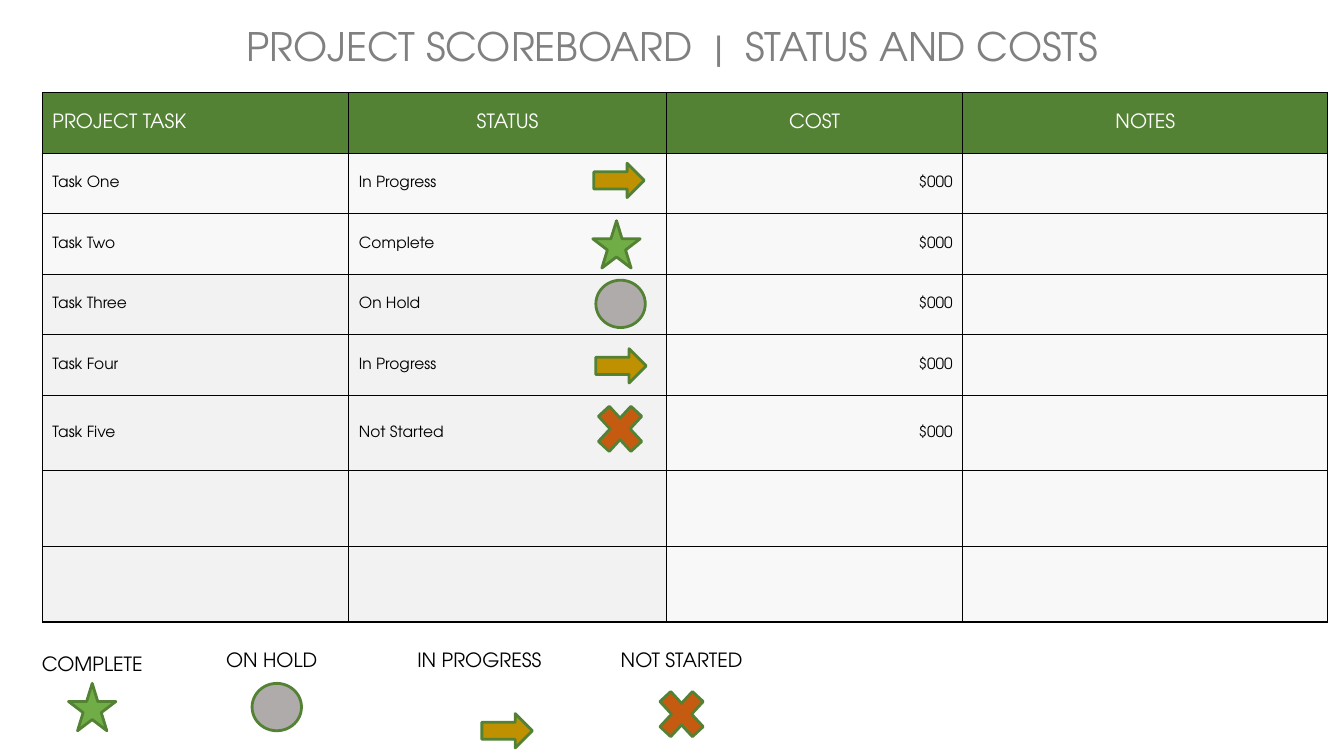
from lxml.etree import SubElement, fromstring
from pptx import Presentation
from pptx.dml.color import RGBColor
from pptx.enum.shapes import MSO_SHAPE
from pptx.enum.text import MSO_ANCHOR, PP_ALIGN
from pptx.oxml.ns import nsdecls, qn
from pptx.util import Inches, Pt


def paint(fill, color):
    fill.solid()
    fill.fore_color.rgb = RGBColor.from_string(color)


def write(frame, text, size, color, align):
    para = frame.paragraphs[0]
    para.alignment = align
    run = para.add_run()
    run.text = text
    run.font.name = "TeX Gyre Adventor"
    run.font.size = Pt(size)
    run.font.bold = False
    paint(run.font.fill, color)


deck = Presentation()
deck.slide_width, deck.slide_height = Inches(13.33), Inches(7.5)
slide = deck.slides.add_slide(deck.slide_layouts[6])

LEFT, CENTER, RIGHT = PP_ALIGN.LEFT, PP_ALIGN.CENTER, PP_ALIGN.RIGHT
widths = [3.04, 3.15, 2.94, 3.62]
heights = [0.6] * 5 + [0.75] * 3
rows = [
    ["PROJECT TASK", "STATUS", "COST", "NOTES"],
    ["Task One", "In Progress", "$000", ""],
    ["Task Two", "Complete", "$000", ""],
    ["Task Three", "On Hold", "$000", ""],
    ["Task Four", "In Progress", "$000", ""],
    ["Task Five", "Not Started", "$000", ""],
    [""] * 4,
    [""] * 4,
]

grid = slide.shapes.add_table(
    len(rows), len(widths), Inches(0.42), Inches(0.92),
    Inches(sum(widths)), Inches(sum(heights))).table
grid.first_row = grid.horz_banding = False
for col, width in zip(grid.columns, widths):
    col.width = Inches(width)
for row, height in zip(grid.rows, heights):
    row.height = Inches(height)

for r, texts in enumerate(rows):
    for c, text in enumerate(texts):
        cell = grid.cell(r, c)
        cell.vertical_anchor = MSO_ANCHOR.MIDDLE
        paint(cell.fill, "F2F2F2" if r else "548235")
        props = cell._tc.get_or_add_tcPr()
        if r:
            alpha = 95 if r > 2 and c < 2 else 50
            tone = props.find(qn("a:solidFill")).find(qn("a:srgbClr"))
            SubElement(tone, qn("a:alpha")).set("val", str(alpha * 1000))
        for i, side in enumerate("LRTB"):
            props.insert(i, fromstring(
                f'<a:ln{side} {nsdecls("a")} w="12700"><a:solidFill>'
                f'<a:srgbClr val="000000"/></a:solidFill></a:ln{side}>'))
        if text and r:
            write(cell.text_frame, text, 11, "000000", RIGHT if c == 2 else LEFT)
        elif text:
            write(cell.text_frame, text, 14, "FFFFFF", CENTER if c else LEFT)

labels = [
    ("PROJECT SCOREBOARD  |  STATUS AND COSTS", 0, 0.17, 13.33, 0.57, 28, "808080"),
    ("COMPLETE", 0.25, 6.42, 1.33, 0.34, 14, "000000"),
    ("ON HOLD", 2.03, 6.38, 1.33, 0.34, 14, "000000"),
    ("IN PROGRESS", 3.81, 6.38, 1.89, 0.34, 14, "000000"),
    ("NOT STARTED", 5.97, 6.38, 1.58, 0.34, 14, "000000"),
]
for text, x, y, w, h, size, color in labels:
    frame = slide.shapes.add_textbox(
        Inches(x), Inches(y), Inches(w), Inches(h)).text_frame
    frame.word_wrap = True
    write(frame, text, size, color, CENTER)

icons = [
    (MSO_SHAPE.MATH_MULTIPLY, 0.62, 0.67, "C55A11", [(5.84, 3.92), (6.45, 6.75)]),
    (MSO_SHAPE.STAR_5_POINT, 0.47, 0.47, "70AD47", [(5.88, 2.19), (0.68, 6.78)]),
    (MSO_SHAPE.OVAL, 0.49, 0.47, "AFABAB", [(5.91, 2.78), (2.5, 6.78)]),
    (MSO_SHAPE.RIGHT_ARROW, 0.5, 0.34, "BF9000",
     [(5.89, 1.62), (5.91, 3.46), (4.78, 7.08)]),
]
for kind, w, h, color, spots in icons:
    for x, y in spots:
        icon = slide.shapes.add_shape(
            kind, Inches(x), Inches(y), Inches(w), Inches(h))
        icon.shadow.inherit = False
        paint(icon.fill, color)
        paint(icon.line.fill, "548235")
        icon.line.width = Pt(2)

deck.save("out.pptx")
